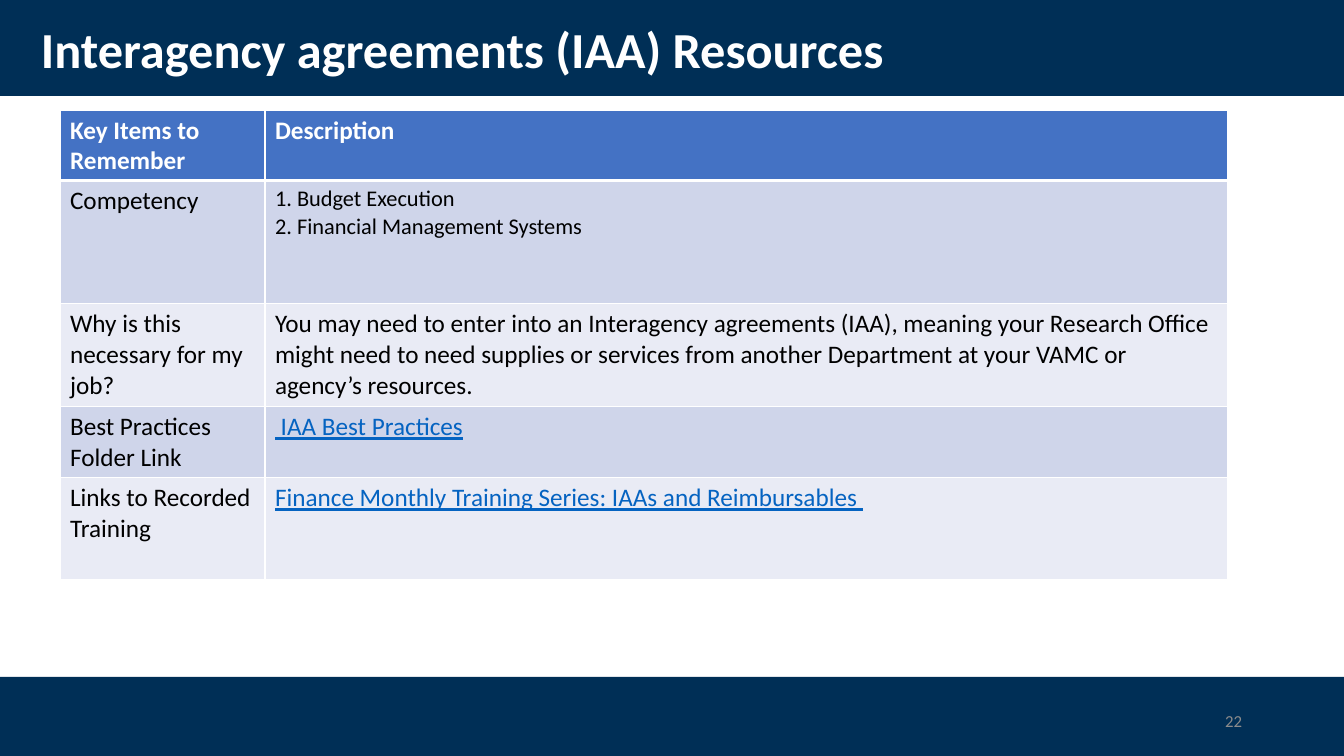
from lxml import etree
from pptx import Presentation
from pptx.dml.color import RGBColor
from pptx.enum.shapes import MSO_SHAPE
from pptx.enum.text import MSO_ANCHOR, PP_ALIGN
from pptx.oxml.ns import qn
from pptx.util import Pt

RECTANGLE = MSO_SHAPE.RECTANGLE
MIDDLE = MSO_ANCHOR.MIDDLE
LEFT, RIGHT = PP_ALIGN.LEFT, PP_ALIGN.RIGHT

SLIDE_WIDTH, SLIDE_HEIGHT = 1344, 756
EMU_PER_PX = 12192000 / SLIDE_WIDTH

NAVY = RGBColor(0x00, 0x2F, 0x56)
WHITE = RGBColor(0xFF, 0xFF, 0xFF)
BLACK = RGBColor(0x00, 0x00, 0x00)
GREY = RGBColor(0x8C, 0x8C, 0x8C)
HEADER_BLUE = RGBColor(0x44, 0x72, 0xC4)
BAND_DARK = RGBColor(0xCF, 0xD5, 0xEA)
BAND_LIGHT = RGBColor(0xE9, 0xEB, 0xF5)
LINK_BLUE = RGBColor(0x05, 0x63, 0xC1)

HEADING = {"size": Pt(18), "color": WHITE, "bold": True}
BODY = {"size": Pt(18), "color": BLACK, "bold": False}
SMALL = {**BODY, "size": Pt(16)}
LINK = {**BODY, "color": LINK_BLUE, "underline": True}

COLUMN_WIDTHS = [205, 963]
RESOURCES = [
    (70, "Key Items to Remember", ["Description"], HEADING, HEADING),
    (123, "Competency",
     ["1. Budget Execution", "2. Financial Management Systems"], BODY, SMALL),
    (103, "Why is this necessary for my job?",
     ["You may need to enter into an Interagency agreements (IAA), meaning your "
      "Research Office might need to need supplies or services from another "
      "Department at your VAMC or agency’s resources."], BODY, BODY),
    (71, "Best Practices Folder Link", [" IAA Best Practices"], BODY, LINK),
    (102, "Links to Recorded Training",
     ["Finance Monthly Training Series: IAAs and Reimbursables\u00a0".replace("\u00a0", " ")],
     BODY, LINK),
]


def px(length):
    """Convert pixels to EMU."""
    return round(length * EMU_PER_PX)


def write_lines(frame, lines, style, align=LEFT, spacing=1.0):
    """Fill a text frame with one paragraph per line."""
    for index, line in enumerate(lines):
        paragraph = frame.paragraphs[0] if index == 0 else frame.add_paragraph()
        paragraph.alignment = align
        paragraph.line_spacing = spacing
        run = paragraph.add_run()
        run.text = line
        for attribute, value in {"name": "Calibri", **style}.items():
            if attribute == "color":
                run.font.color.rgb = value
            else:
                setattr(run.font, attribute, value)


def add_band(slide, top, height):
    """Draw a navy band across the slide."""
    band = slide.shapes.add_shape(RECTANGLE, 0, px(top), px(SLIDE_WIDTH), px(height))
    band.shadow.inherit = False
    band.fill.solid()
    band.fill.fore_color.rgb = NAVY
    band.line.fill.background()


def add_label(slide, box, text, style, **layout):
    """Place a vertically centred line of text."""
    frame = slide.shapes.add_textbox(*map(px, box)).text_frame
    frame.word_wrap = True
    frame.vertical_anchor = MIDDLE
    write_lines(frame, [text], style, **layout)


def style_cell(cell, fill, top_width, bottom_width):
    """Give a cell white borders and a solid fill."""
    properties = cell._tc.get_or_add_tcPr()
    edges = {"a:lnL": 1, "a:lnR": 1, "a:lnT": top_width, "a:lnB": bottom_width}
    for tag, width in edges.items():
        edge = etree.SubElement(properties, qn(tag), w=str(Pt(width)))
        solid = etree.SubElement(edge, qn("a:solidFill"))
        etree.SubElement(solid, qn("a:srgbClr"), val=str(WHITE))
    cell.fill.solid()
    cell.fill.fore_color.rgb = fill


def add_resource_table(slide, left, top):
    """Build the table of key items and descriptions."""
    heights = [resource[0] for resource in RESOURCES]
    table = slide.shapes.add_table(
        len(RESOURCES), len(COLUMN_WIDTHS), px(left), px(top),
        px(sum(COLUMN_WIDTHS)), px(sum(heights))).table
    for column, width in zip(table.columns, COLUMN_WIDTHS):
        column.width = px(width)
    for index, (height, item, description, item_style, text_style) in enumerate(RESOURCES):
        table.rows[index].height = px(height)
        band = BAND_DARK if index % 2 else BAND_LIGHT
        fill = HEADER_BLUE if index == 0 else band
        contents = [([item], item_style), (description, text_style)]
        for column, (lines, style) in enumerate(contents):
            cell = table.cell(index, column)
            style_cell(cell, fill, 3 if index == 1 else 1, 3 if index == 0 else 1)
            write_lines(cell.text_frame, lines, style)


def main():
    """Build and save the slide."""
    deck = Presentation()
    deck.slide_width, deck.slide_height = px(SLIDE_WIDTH), px(SLIDE_HEIGHT)
    slide = deck.slides.add_slide(deck.slide_layouts[6])
    add_band(slide, 0, 96)
    add_band(slide, 677, 79)
    add_label(slide, (31, 18, 1159, 69), "Interagency agreements (IAA) Resources",
              {"size": Pt(36), "color": WHITE, "bold": True}, spacing=0.9)
    add_resource_table(slide, 60, 110)
    add_label(slide, (950, 701, 302, 40), "22",
              {"size": Pt(12), "color": GREY}, align=RIGHT)
    deck.save("out.pptx")


if __name__ == "__main__":
    main()
